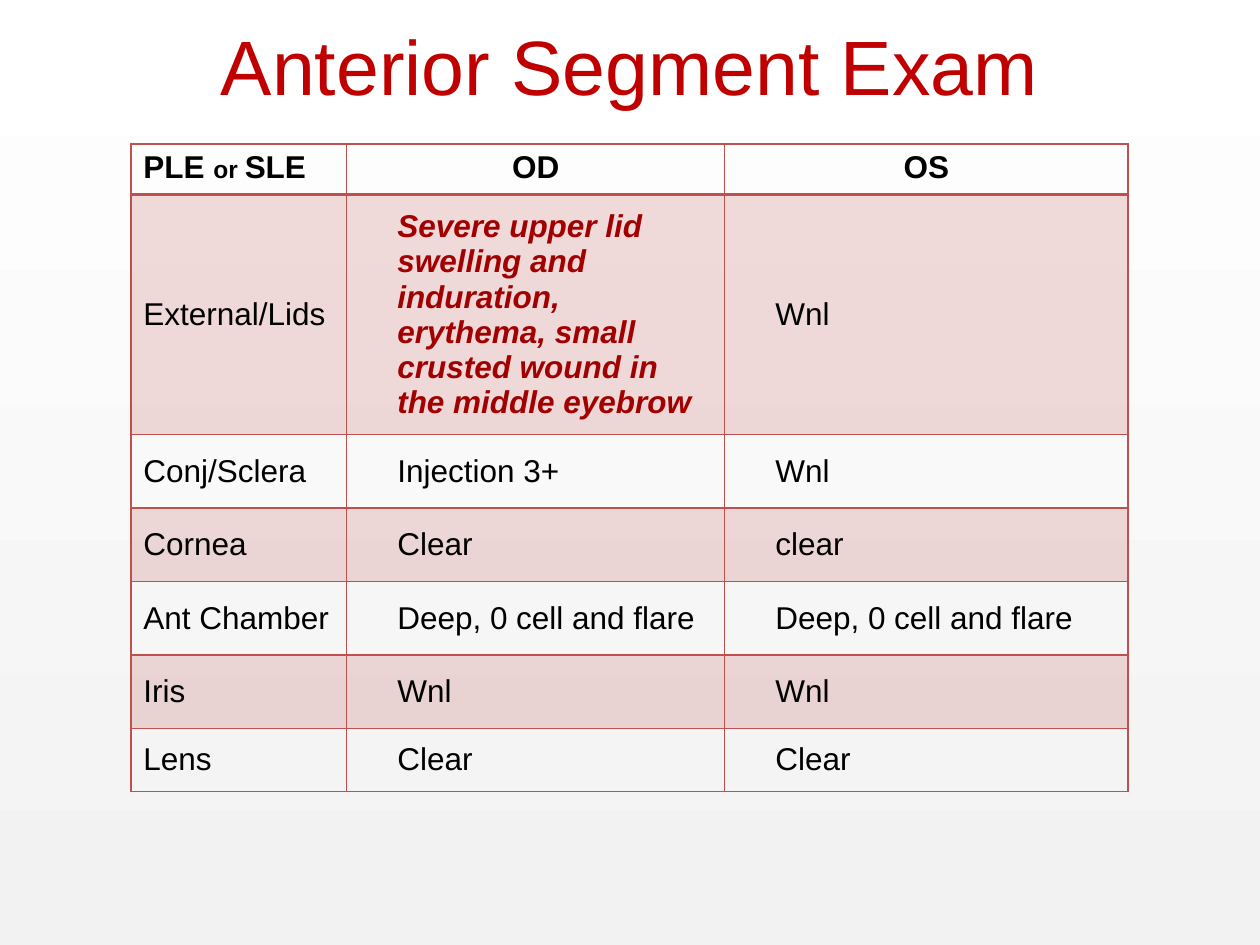
import pptx
import pptx.util
import pptx.dml.color
import pptx.enum.shapes
import pptx.enum.text
import pptx.oxml
import pptx.oxml.ns

Cm = pptx.util.Cm
Pt = pptx.util.Pt
ALIGN = pptx.enum.text.PP_ALIGN
ANCHOR = pptx.enum.text.MSO_ANCHOR


def color(value):
    return pptx.dml.color.RGBColor.from_string(value)


def write(paragraph, text, size, ink, **formats):
    run = paragraph.add_run()
    run.text = text
    run.font.color.rgb = color(ink)
    for key, value in {"name": "Arial", "size": Pt(size), **formats}.items():
        setattr(run.font, key, value)


deck = pptx.Presentation()
deck.slide_width, deck.slide_height = Cm(25.4), Cm(19.05)
slide = deck.slides.add_slide(deck.slide_layouts[6])

backdrop = slide.shapes.add_shape(
    pptx.enum.shapes.MSO_SHAPE.RECTANGLE, 0, 0, deck.slide_width, deck.slide_height)
backdrop.shadow.inherit = False
backdrop.line.fill.background()
backdrop.fill.gradient()
backdrop.fill.gradient_angle = 90
for stop, position, tone in zip(backdrop.fill.gradient_stops, (0, 1), ("F2F2F2", "FFFFFF")):
    stop.position = position
    stop.color.rgb = color(tone)

heading = slide.shapes.add_textbox(Cm(1.27), Cm(-0.28), Cm(22.86), Cm(3.18)).text_frame
heading.word_wrap = True
heading.vertical_anchor = ANCHOR.MIDDLE
heading.paragraphs[0].alignment = ALIGN.CENTER
write(heading.paragraphs[0], "Anterior Segment Exam", 44, "C00000")

findings = [
    ("PLE or SLE", "OD", "OS"),
    ("External/Lids",
     "Severe upper lid swelling and induration, erythema, small crusted wound in the middle eyebrow",
     "Wnl"),
    ("Conj/Sclera", "Injection 3+", "Wnl"),
    ("Cornea", "Clear", "clear"),
    ("Ant Chamber", "Deep, 0 cell and flare", "Deep, 0 cell and flare"),
    ("Iris", "Wnl", "Wnl"),
    ("Lens", "Clear", "Clear"),
]
widths = [4.35, 7.62, 8.13]
heights = [1.03, 4.52, 1.48, 1.48, 1.48, 1.48, 1.27]

exam = slide.shapes.add_table(
    len(heights), len(widths), Cm(2.64), Cm(2.9), Cm(sum(widths)), Cm(sum(heights))).table
exam.first_row = exam.horz_banding = False
style = exam._tbl.tblPr.find(pptx.oxml.ns.qn("a:tableStyleId"))
style.text = "{2D5ABB26-0587-4C30-8999-92F81FD0307C}"
for column, width in zip(exam.columns, widths):
    column.width = Cm(width)
for row, height in zip(exam.rows, heights):
    row.height = Cm(height)

for r, finding in enumerate(findings):
    for c, text in enumerate(finding):
        cell = exam.cell(r, c)
        is_header = r == 0
        is_abnormal = (r, c) == (1, 1)
        layout = {
            "vertical_anchor": ANCHOR.TOP if is_header else ANCHOR.MIDDLE,
            "margin_left": Cm(1.02 if c and not is_header else 0.25),
            "margin_right": Cm(0.25),
            "margin_top": Cm(0.13),
            "margin_bottom": Cm(0.13),
        }
        for key, value in layout.items():
            setattr(cell, key, value)

        properties = cell._tc.get_or_add_tcPr()
        for side in "LRTB":
            heavy = (r, side) in ((0, "B"), (1, "T"))
            properties.append(pptx.oxml.parse_xml(
                f'<a:ln{side} {pptx.oxml.ns.nsdecls("a")} w="{Pt(2 if heavy else 1)}">'
                f'<a:solidFill><a:srgbClr val="C0504D"/></a:solidFill></a:ln{side}>'))
        if r % 2:
            cell.fill.solid()
            cell.fill.fore_color.rgb = color("C0504D")
            tint = properties.find(".//" + pptx.oxml.ns.qn("a:solidFill") + "[last()]")
            tint = properties.find(pptx.oxml.ns.qn("a:solidFill"))[0]
            tint.append(pptx.oxml.parse_xml(
                f'<a:alpha {pptx.oxml.ns.nsdecls("a")} val="20000"/>'))
        else:
            cell.fill.background()

        paragraph = cell.text_frame.paragraphs[0]
        paragraph.alignment = ALIGN.CENTER if is_header and c else ALIGN.LEFT
        pieces = [("PLE ", 18), ("or ", 14), ("SLE", 18)] if (r, c) == (0, 0) else [(text, 18)]
        for piece, size in pieces:
            write(paragraph, piece, size, "A20000" if is_abnormal else "000000",
                  bold=is_header or is_abnormal, italic=is_abnormal)

deck.save("out.pptx")
